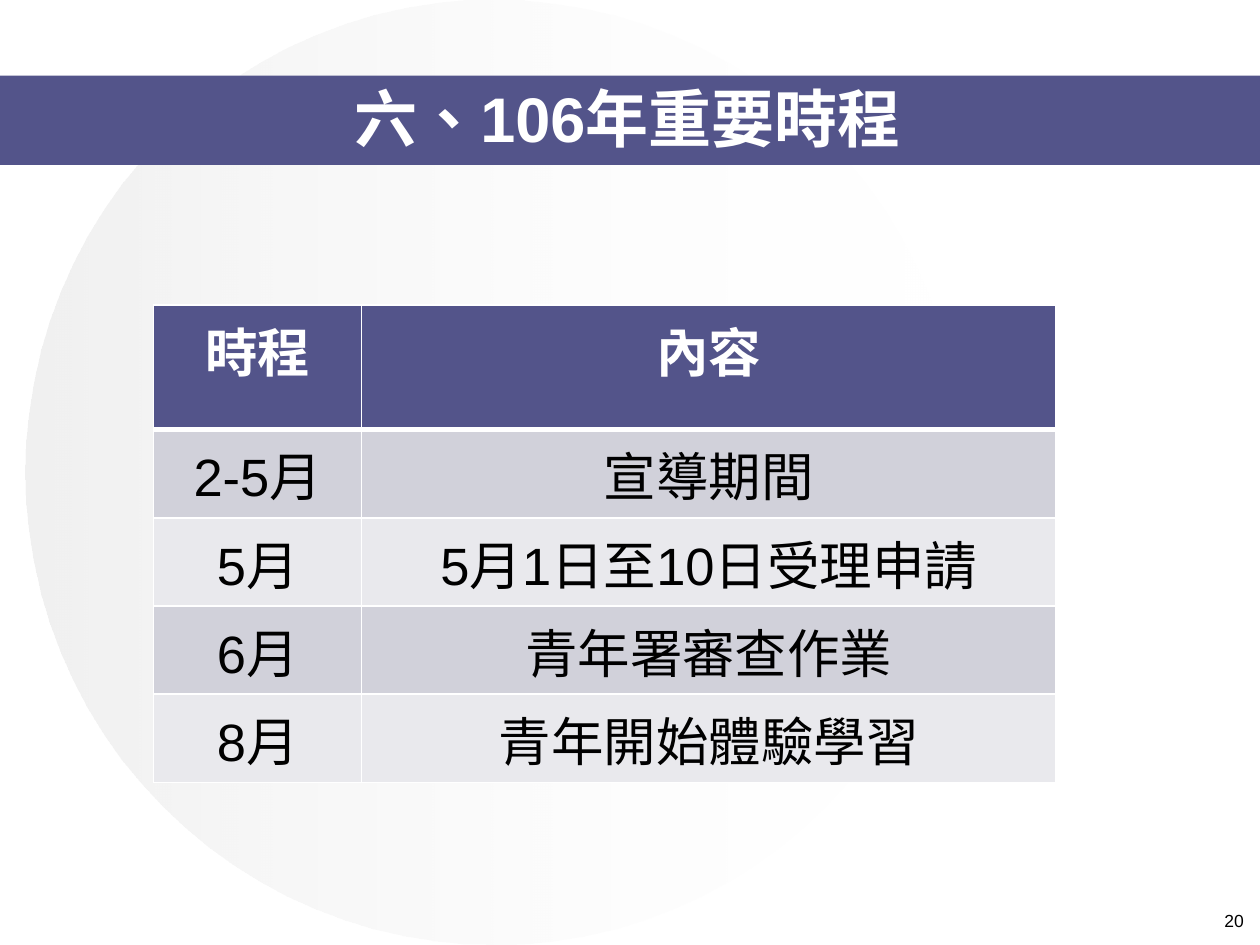
from lxml import etree
from pptx import Presentation
from pptx.dml.color import RGBColor
from pptx.enum.shapes import MSO_SHAPE
from pptx.enum.text import MSO_ANCHOR, PP_ALIGN
from pptx.oxml.ns import qn
from pptx.util import Inches, Pt

OVAL, RECTANGLE = MSO_SHAPE.OVAL, MSO_SHAPE.RECTANGLE
CENTER, RIGHT = PP_ALIGN.CENTER, PP_ALIGN.RIGHT
TOP, MIDDLE = MSO_ANCHOR.TOP, MSO_ANCHOR.MIDDLE

WHITE = RGBColor(0xFF, 0xFF, 0xFF)
BLACK = RGBColor(0x00, 0x00, 0x00)
GRAY = RGBColor(0xDE, 0xDE, 0xDE)
INDIGO = RGBColor(0x53, 0x54, 0x8A)
BAND_DARK = RGBColor(0xD1, 0xD1, 0xDA)
BAND_LIGHT = RGBColor(0xE9, 0xE9, 0xED)

FONT = "Arial"
LANGUAGE = "zh-TW"
SCHEDULE = [
    ("時程", "內容"),
    ("2-5月", "宣導期間"),
    ("5月", "5月1日至10日受理申請"),
    ("6月", "青年署審查作業"),
    ("8月", "青年開始體驗學習"),
]
COLUMN_WIDTHS = (1.65, 5.51)
HEADER_HEIGHT, ROW_HEIGHT = 0.99, 0.7


def set_text(text_frame, text, size, color, bold=False, alignment=CENTER):
    text_frame.text = text
    paragraph = text_frame.paragraphs[0]
    paragraph.alignment = alignment
    for run in paragraph.runs:
        run.font.name = FONT
        run.font.size = Pt(size)
        run.font.bold = bold
        run.font.color.rgb = color
        run._r.get_or_add_rPr().set("lang", LANGUAGE)


def add_plain_shape(slide, kind, left, top, width, height):
    shape = slide.shapes.add_shape(
        kind, Inches(left), Inches(top), Inches(width), Inches(height))
    shape.shadow.inherit = False
    shape.line.fill.background()
    return shape


def add_fading_circle(slide):
    circle = add_plain_shape(slide, OVAL, 0.2, 0, 7.44, 7.5)
    circle.fill.gradient()
    circle.fill.gradient_angle = 0
    for stop, color, opacity in zip(
            circle.fill.gradient_stops, (GRAY, WHITE), (44, 0)):
        stop.color.rgb = color
        color_element = stop._gs.find(qn("a:srgbClr"))
        etree.SubElement(color_element, qn("a:alpha"), val=str(opacity * 1000))


def add_title_band(slide):
    band = add_plain_shape(slide, RECTANGLE, 0, 0.6, 10, 0.71)
    band.fill.solid()
    band.fill.fore_color.rgb = INDIGO


def add_text(slide, text, left, top, width, height, size, color,
             bold=False, alignment=CENTER, anchor=TOP):
    box = slide.shapes.add_textbox(
        Inches(left), Inches(top), Inches(width), Inches(height))
    box.text_frame.word_wrap = True
    box.text_frame.vertical_anchor = anchor
    set_text(box.text_frame, text, size, color, bold, alignment)


def set_borders(cell, top_width, bottom_width):
    """Draw white cell borders; they must precede the fill in the XML."""
    properties = cell._tc.get_or_add_tcPr()
    widths = (("L", 1), ("R", 1), ("T", top_width), ("B", bottom_width))
    for side, width in widths:
        border = etree.SubElement(
            properties, qn(f"a:ln{side}"), w=str(Pt(width)))
        fill = etree.SubElement(border, qn("a:solidFill"))
        etree.SubElement(fill, qn("a:srgbClr"), val=str(WHITE))


def add_schedule_table(slide):
    height = HEADER_HEIGHT + ROW_HEIGHT * (len(SCHEDULE) - 1)
    table = slide.shapes.add_table(
        len(SCHEDULE), len(COLUMN_WIDTHS), Inches(1.22), Inches(2.42),
        Inches(sum(COLUMN_WIDTHS)), Inches(height)).table
    for column, width in zip(table.columns, COLUMN_WIDTHS):
        column.width = Inches(width)
    for row_index, texts in enumerate(SCHEDULE):
        is_header = row_index == 0
        table.rows[row_index].height = Inches(
            HEADER_HEIGHT if is_header else ROW_HEIGHT)
        band_color = BAND_DARK if row_index % 2 else BAND_LIGHT
        for column_index, text in enumerate(texts):
            cell = table.cell(row_index, column_index)
            set_borders(cell, 3 if row_index == 1 else 1,
                        3 if is_header else 1)
            cell.fill.solid()
            cell.fill.fore_color.rgb = INDIGO if is_header else band_color
            set_text(cell.text_frame, text, 30,
                     WHITE if is_header else BLACK, is_header)


def main():
    presentation = Presentation()
    presentation.slide_width = Inches(10)
    presentation.slide_height = Inches(7.5)
    slide = presentation.slides.add_slide(presentation.slide_layouts[6])
    add_fading_circle(slide)
    add_title_band(slide)
    add_text(slide, "六、106年重要時程", 1.69, 0.67, 6.58, 0.53, 36, WHITE,
             bold=True, anchor=MIDDLE)
    add_text(slide, "20", 9.07, 7.17, 0.9, 0.29, 10, BLACK, alignment=RIGHT)
    add_schedule_table(slide)
    presentation.save("out.pptx")


if __name__ == "__main__":
    main()
